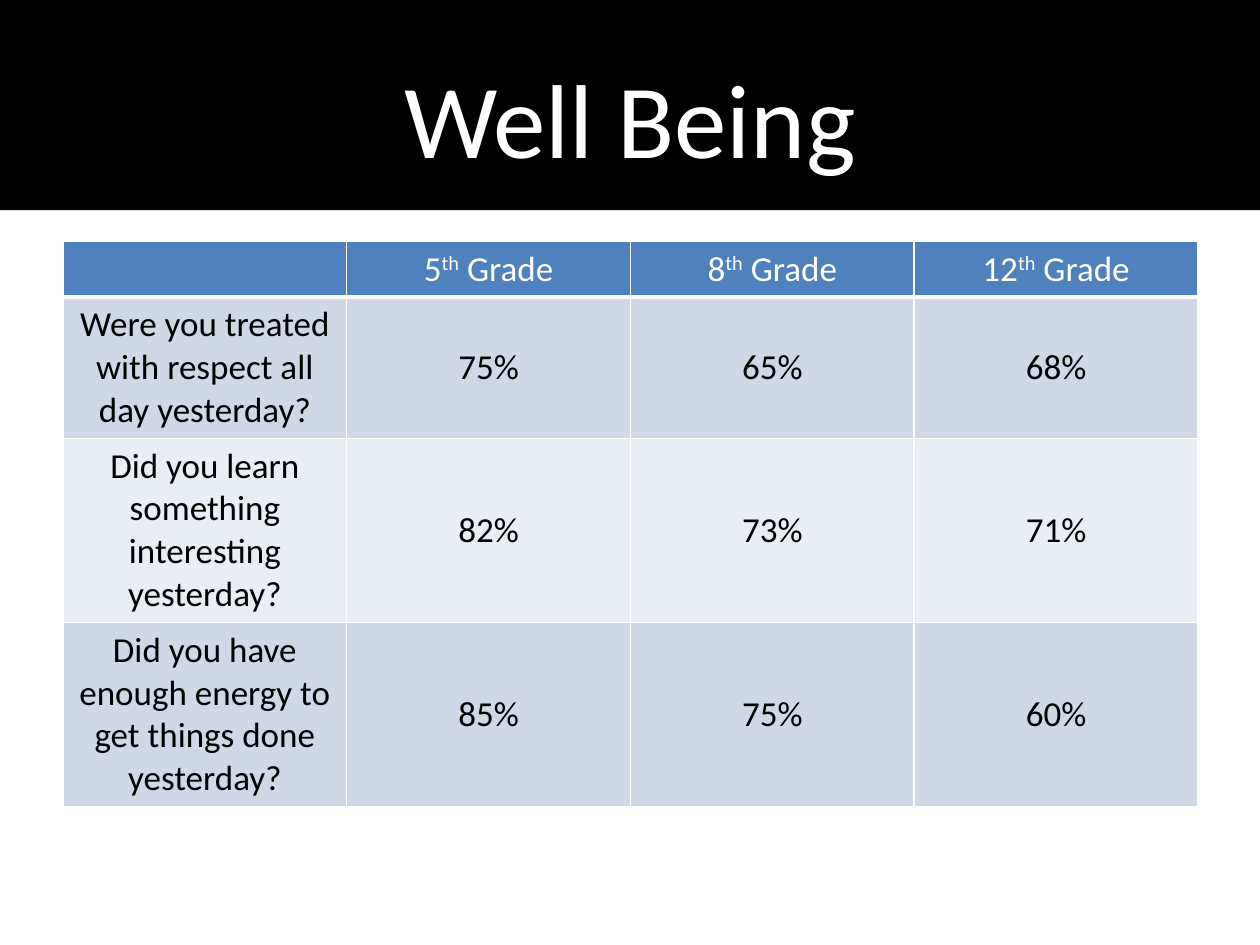
from lxml import etree
from pptx import Presentation
from pptx.dml.color import RGBColor
from pptx.enum.shapes import MSO_SHAPE
from pptx.enum.text import MSO_ANCHOR, PP_ALIGN
from pptx.oxml.ns import qn
from pptx.util import Cm, Pt

RECTANGLE = MSO_SHAPE.RECTANGLE
MIDDLE = MSO_ANCHOR.MIDDLE
CENTER = PP_ALIGN.CENTER

FONT = "Calibri"
COLORS = {
    "black": "000000",
    "white": "FFFFFF",
    "header": "4F81BD",
    "odd_row": "D0D8E8",
    "even_row": "E9EDF4",
}
TITLE_ONLY = 5
SUPERSCRIPT = "30000"

GRADES = ["5", "8", "12"]
ANSWERS = [
    ("Were you treated with respect all day yesterday?", "75%", "65%", "68%"),
    ("Did you learn something interesting yesterday?", "82%", "73%", "71%"),
    ("Did you have enough energy to get things done yesterday?", "85%", "75%", "60%"),
]
COLUMN_WIDTH = Cm(5.72)
ROW_HEIGHTS = [Cm(1.12), Cm(2.84), Cm(3.71), Cm(3.71)]


def color(name):
    return RGBColor.from_string(COLORS[name])


def format_text(frame, size, color_name):
    frame.vertical_anchor = MIDDLE
    for para in frame.paragraphs:
        para.alignment = CENTER
        for span in para.runs:
            span.font.name = FONT
            span.font.size = Pt(size)
            span.font.bold = False
            span.font.color.rgb = color(color_name)


def add_band(page, width):
    band = page.shapes.add_shape(RECTANGLE, 0, 0, width, Cm(4.24))
    band.shadow.inherit = False
    band.fill.solid()
    band.fill.fore_color.rgb = color("black")
    band.line.fill.background()
    # Send the band behind the title
    page.shapes.title._element.addprevious(band._element)


def set_title(page, text):
    title = page.shapes.title
    title.left, title.top = Cm(1.27), Cm(0.76)
    title.width, title.height = Cm(22.86), Cm(3.18)
    title.text_frame.text = text
    format_text(title.text_frame, 60, "white")


def set_borders(cell, bottom_width):
    properties = cell._tc.get_or_add_tcPr()
    widths = {"a:lnL": 1, "a:lnR": 1, "a:lnT": 1, "a:lnB": bottom_width}
    for tag, width in widths.items():
        line = etree.SubElement(properties, qn(tag), w=str(Pt(width)))
        fill = etree.SubElement(line, qn("a:solidFill"))
        etree.SubElement(fill, qn("a:srgbClr"), val=COLORS["white"])


def style_cell(cell, fill_name, text_color, bottom_width=1):
    set_borders(cell, bottom_width)
    cell.fill.solid()
    cell.fill.fore_color.rgb = color(fill_name)
    format_text(cell.text_frame, 20, text_color)
    cell.vertical_anchor = MIDDLE


def write_grade(cell, number):
    para = cell.text_frame.paragraphs[0]
    for text in (number, "th", " Grade"):
        para.add_run().text = text
    para.runs[1].font._element.set("baseline", SUPERSCRIPT)


def add_answers_table(page):
    column_count = len(GRADES) + 1
    table = page.shapes.add_table(
        len(ROW_HEIGHTS), column_count, Cm(1.27), Cm(4.87),
        COLUMN_WIDTH * column_count, sum(ROW_HEIGHTS)).table
    for column in table.columns:
        column.width = COLUMN_WIDTH
    for row, height in zip(table.rows, ROW_HEIGHTS):
        row.height = height

    # Header row
    for index, number in enumerate(GRADES, start=1):
        write_grade(table.cell(0, index), number)
    for cell in table.rows[0].cells:
        style_cell(cell, "header", "white", bottom_width=3)

    # Question rows
    for row_index, answers in enumerate(ANSWERS, start=1):
        fill_name = "odd_row" if row_index % 2 else "even_row"
        for column_index, text in enumerate(answers):
            cell = table.cell(row_index, column_index)
            cell.text_frame.text = text
            style_cell(cell, fill_name, "black")


def main():
    deck = Presentation()
    deck.slide_width, deck.slide_height = Cm(25.4), Cm(19.05)
    page = deck.slides.add_slide(deck.slide_layouts[TITLE_ONLY])
    add_band(page, deck.slide_width)
    set_title(page, "Well Being")
    add_answers_table(page)
    deck.save("out.pptx")


if __name__ == "__main__":
    main()
